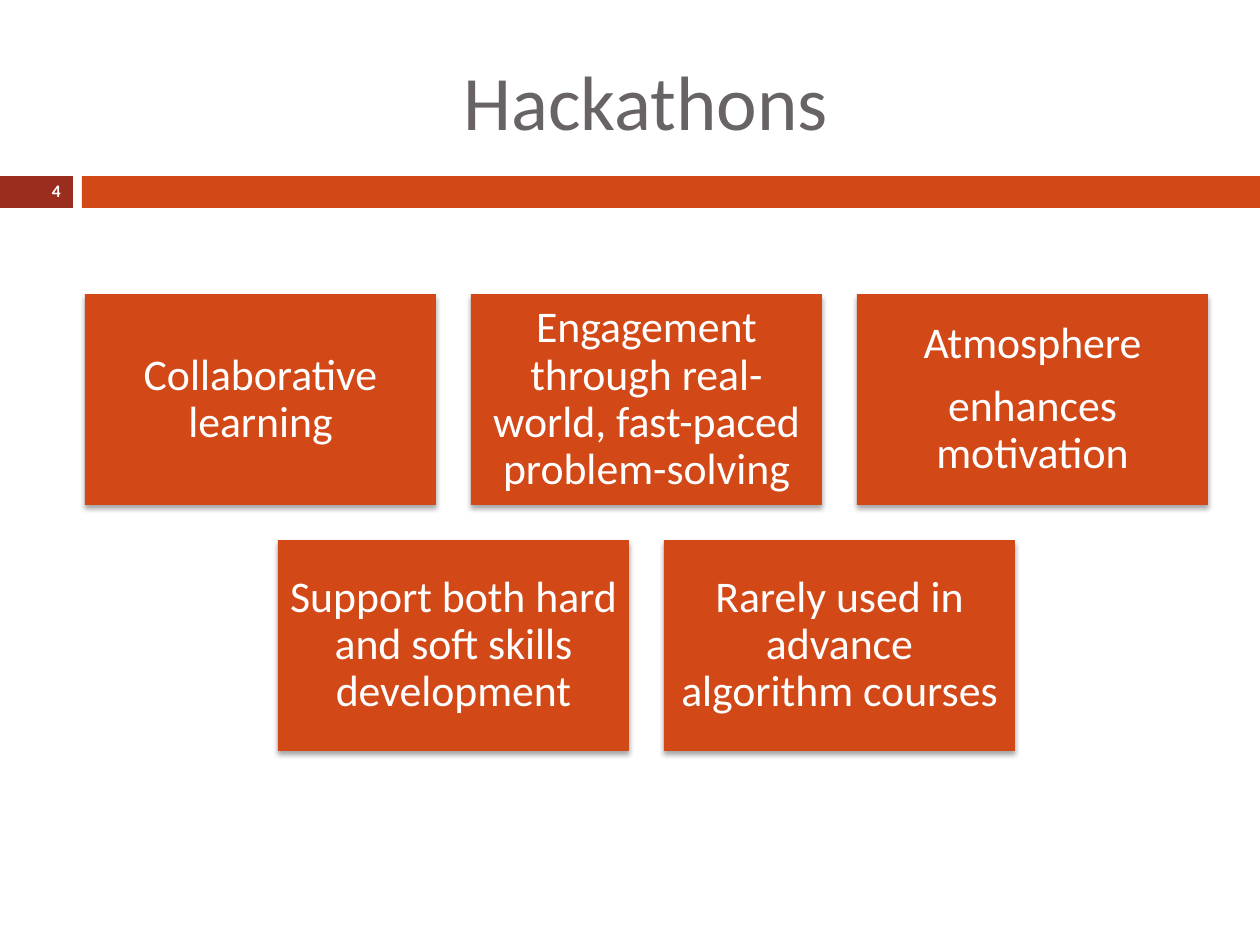
from dataclasses import dataclass

from lxml.etree import SubElement
from pptx import Presentation
from pptx.dml.color import RGBColor
from pptx.enum.shapes import MSO_SHAPE as Shape
from pptx.enum.text import MSO_ANCHOR as Anchor, PP_ALIGN as Align
from pptx.oxml.ns import qn
from pptx.util import Emu, Pt

EMU_PER_PX = 914400 / 126


def px(length):
    """Turn whole px into EMU."""
    return Emu(round(length * EMU_PER_PX))


@dataclass(frozen=True)
class Theme:
    """Colours, font and type sizes of the slide."""
    accent: str = "D34817"
    dark: str = "9B2D1F"
    heading: str = "696464"
    light: str = "FFFFFF"
    shadow: str = "000000"
    font: str = "Calibri"
    title_size: int = 44
    card_size: int = 25
    number_size: int = 10


class SlideBuilder:
    """Draws styled elements on the current slide."""

    def __init__(self, slide, theme):
        """Keep the slide and its theme."""
        self.slide = slide
        self.theme = theme

    def set_text(self, shape, lines, size, color, bold=False, inset=None, **spacing):
        """Fill a shape with formatted paragraphs."""
        frame = shape.text_frame
        frame.word_wrap = True
        frame.vertical_anchor = Anchor.MIDDLE
        if inset is not None:
            for side in ("left", "top", "right", "bottom"):
                setattr(frame, f"margin_{side}", px(inset))
        frame.text = "\n".join(lines)
        font_format = {"name": self.theme.font, "size": Pt(size), "bold": bold}
        for paragraph in frame.paragraphs:
            for name, value in spacing.items():
                setattr(paragraph, name, value)
            for name, value in font_format.items():
                setattr(paragraph.runs[0].font, name, value)
            paragraph.runs[0].font.color.rgb = RGBColor.from_string(color)

    def title(self, text, left, top, width, height):
        """Place and format the title placeholder."""
        shape = self.slide.shapes.title
        place = {"left": left, "top": top, "width": width, "height": height}
        for name, value in place.items():
            setattr(shape, name, px(value))
        self.set_text(shape, [text], self.theme.title_size, self.theme.heading,
                      alignment=Align.CENTER)

    def bar(self, color, *box):
        """Add a plain filled rectangle."""
        shape = self.slide.shapes.add_shape(Shape.RECTANGLE, *map(px, box))
        shape.fill.solid()
        shape.fill.fore_color.rgb = RGBColor.from_string(color)
        shape.line.fill.background()
        shape.shadow.inherit = False
        return shape

    def number(self, text, *box):
        """Add the slide number."""
        shape = self.slide.shapes.add_textbox(*map(px, box))
        self.set_text(shape, [text], self.theme.number_size, self.theme.light, bold=True,
                      alignment=Align.RIGHT, line_spacing=0.9, space_after=Pt(6))

    def card(self, lines, *box):
        """Add a text card with a soft shadow below it."""
        shape = self.bar(self.theme.accent, *box)
        effects = shape._element.spPr.find(qn("a:effectLst"))
        shadow = SubElement(effects, qn("a:outerShdw"), blurRad=str(Pt(3)),
                            dist=str(Pt(2)), dir="5400000", rotWithShape="0")
        color = SubElement(shadow, qn("a:srgbClr"), val=self.theme.shadow)
        SubElement(color, qn("a:alpha"), val="35000")
        self.set_text(shape, lines, self.theme.card_size, self.theme.light, inset=12,
                      alignment=Align.CENTER, line_spacing=0.9, space_after=Pt(8.75))

    def card_rows(self, rows, center, top, width, height, gap):
        """Lay out rows of cards, each row centred."""
        for row_index, row in enumerate(rows):
            row_width = len(row) * (width + gap) - gap
            row_top = top + row_index * (height + gap)
            for column, lines in enumerate(row):
                left = center - row_width // 2 + column * (width + gap)
                self.card(lines, left, row_top, width, height)


def main():
    """Build and save the slide."""
    presentation = Presentation()
    presentation.slide_width, presentation.slide_height = px(1260), px(945)
    slide = presentation.slides.add_slide(presentation.slide_layouts[5])
    theme = Theme()
    builder = SlideBuilder(slide, theme)
    builder.bar(theme.dark, 0, 176, 73, 32)
    builder.bar(theme.accent, 82, 176, 1178, 32)
    builder.title("Hackathons", 84, 32, 1124, 136)
    builder.number("4", 0, 175, 73, 34)
    rows = [
        [["Collaborative learning"],
         ["Engagement through real-world, fast-paced problem-solving"],
         ["Atmosphere", "enhances motivation"]],
        [["Support both hard and soft skills development"],
         ["Rarely used in advance algorithm courses"]],
    ]
    builder.card_rows(rows, center=646, top=294, width=351, height=211, gap=35)
    presentation.save("out.pptx")


if __name__ == "__main__":
    main()
